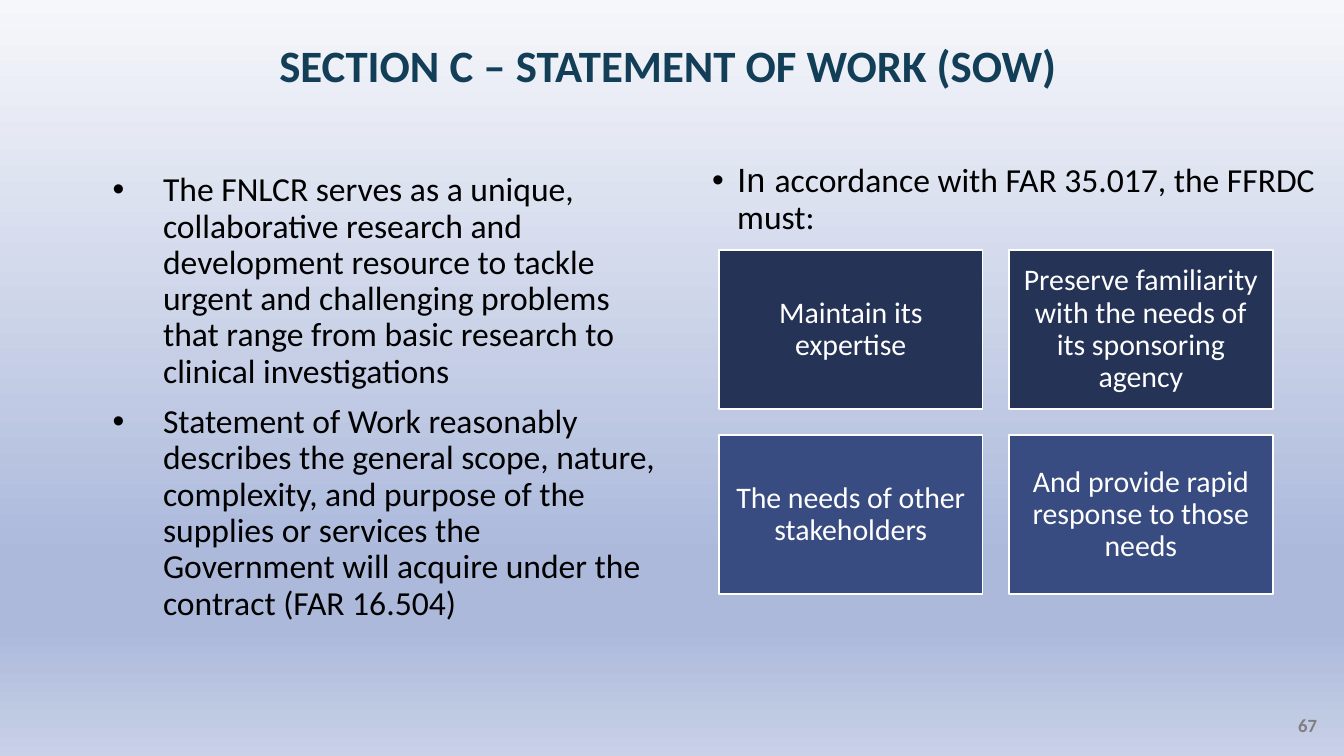
import copy

import pptx
import pptx.dml.color
import pptx.enum.shapes
import pptx.enum.text
import pptx.oxml.ns
import pptx.util
from lxml import etree

Pt = pptx.util.Pt
Align = pptx.enum.text.PP_ALIGN
Anchor = pptx.enum.text.MSO_ANCHOR
qn = pptx.oxml.ns.qn


def color(hex_string):
    return pptx.dml.color.RGBColor.from_string(hex_string)


def add_bullet(paragraph, indent):
    """Give the paragraph a round bullet with a hanging indent in points."""
    properties = paragraph._p.get_or_add_pPr()
    properties.set("marL", str(Pt(indent)))
    properties.set("indent", str(-Pt(indent)))
    etree.SubElement(properties, qn("a:buFont"), typeface="Arial")
    etree.SubElement(properties, qn("a:buChar"), char="•")


def write_text(frame, paragraphs, size=18, fill="000000", bold=False, align=Align.LEFT,
               anchor=Anchor.TOP, insets=(7.2, 3.6), bullet_indent=None, space=7.5):
    """Fill a text frame; each paragraph is a list of (text, font name) runs."""
    frame.word_wrap = True
    frame.vertical_anchor = anchor
    frame.margin_left = frame.margin_right = Pt(insets[0])
    frame.margin_top = frame.margin_bottom = Pt(insets[1])
    for index, runs in enumerate(paragraphs):
        paragraph = frame.add_paragraph() if index else frame.paragraphs[0]
        paragraph.alignment = align
        paragraph.line_spacing = 0.9
        if index:
            paragraph.space_before = Pt(space)
        if bullet_indent:
            add_bullet(paragraph, bullet_indent)
        for text, font_name in runs:
            run = paragraph.add_run()
            run.text = text
            run.font.name = font_name
            run.font.size = Pt(size)
            run.font.bold = bold
            run.font.color.rgb = color(fill)


class SlideBuilder:
    font = "Calibri"

    def __init__(self, presentation):
        self.slide = presentation.slides.add_slide(presentation.slide_layouts[6])

    def background(self, stops):
        fill = self.slide.background.fill
        fill.gradient()
        fill.gradient_angle = 270
        stop_list = self.slide.element.find(".//" + qn("a:gsLst"))
        while len(stop_list) < len(stops):
            stop_list.append(copy.deepcopy(stop_list[0]))
        for stop, (position, hex_string) in zip(fill.gradient_stops, stops):
            stop.position = position
            stop.color.rgb = color(hex_string)

    def text(self, left, top, width, height, paragraphs, **text_format):
        box = self.slide.shapes.add_textbox(Pt(left), Pt(top), Pt(width), Pt(height))
        write_text(box.text_frame, paragraphs, **text_format)

    def card(self, left, top, width, height, text, fill):
        shape = self.slide.shapes.add_shape(
            pptx.enum.shapes.MSO_SHAPE.RECTANGLE, Pt(left), Pt(top), Pt(width), Pt(height))
        shape.shadow.inherit = False
        shape.fill.solid()
        shape.fill.fore_color.rgb = color(fill)
        shape.line.color.rgb = color("FFFFFF")
        shape.line.width = Pt(1)
        write_text(shape.text_frame, [[(text, self.font)]], size=16, fill="FFFFFF",
                   align=Align.CENTER, anchor=Anchor.MIDDLE, insets=(5, 5))


def main():
    presentation = pptx.Presentation()
    presentation.slide_width = Pt(720)
    presentation.slide_height = Pt(405)

    builder = SlideBuilder(presentation)
    font = builder.font
    builder.background([(0, "F6F7FB"), (0.74, "ACB9DB"), (0.83, "ACB9DB"), (1, "C8D1E7")])

    builder.text(681, 384, 24.5, 14, [[("67", font)]], size=10, fill="7F7F7F",
                 bold=True, align=Align.RIGHT, insets=(0, 0))
    builder.text(39, 24.5, 643, 25, [[("SECTION C – STATEMENT OF WORK (SOW) ", font)]],
                 size=24, fill="123E57", bold=True, align=Align.CENTER,
                 anchor=Anchor.BOTTOM, insets=(0, 0))

    builder.text(374.4, 84.2, 345.6, 45, [
        [("In ", "Arial"), ("accordance with FAR 35.017, the FFRDC must:", font)],
    ], bullet_indent=13.5)
    builder.text(53.3, 89, 306.7, 250, [
        [("The FNLCR serves as a unique, collaborative research and development resource "
          "to tackle urgent and challenging problems that range from basic research to "
          "clinical investigations", font)],
        [("Statement of Work reasonably describes the general scope, nature, complexity, "
          "and purpose of the supplies or services the Government will acquire under the "
          "contract (FAR 16.504)", font)],
    ], bullet_indent=27)

    card_rows = [
        ("253356", ["Maintain its expertise",
                    "Preserve familiarity with the needs of its sponsoring agency"]),
        ("384C81", ["The needs of other stakeholders",
                    "And provide rapid response to those needs"]),
    ]
    width, height, gap = 141.2, 85, 14.2
    for row, (fill, labels) in enumerate(card_rows):
        for column, label in enumerate(labels):
            builder.card(385.2 + column * (width + gap), 134 + row * (height + gap),
                         width, height, label, fill)

    presentation.save("out.pptx")


if __name__ == "__main__":
    main()
